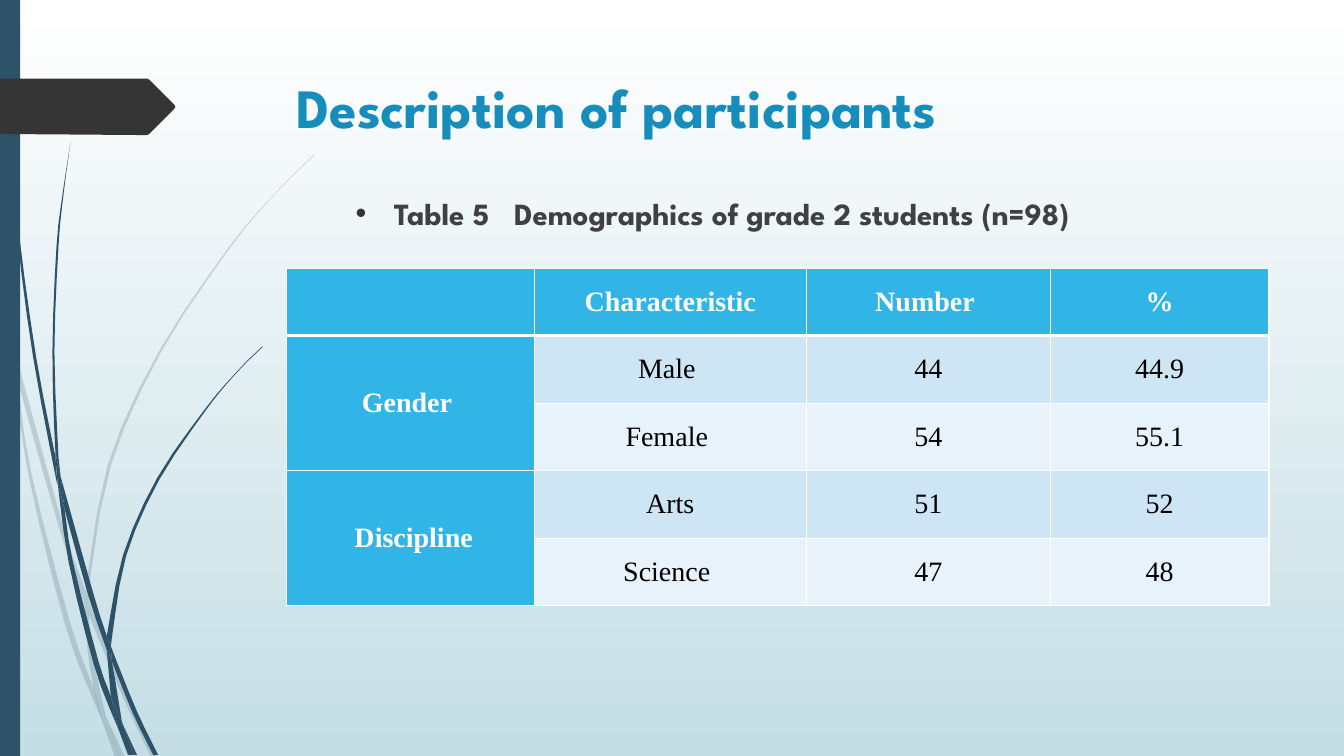
from math import dist

from pptx import Presentation
from pptx.dml.color import RGBColor
from pptx.enum.shapes import MSO_SHAPE
from pptx.enum.text import MSO_ANCHOR, PP_ALIGN
from pptx.oxml.ns import qn
from pptx.oxml.xmlchemy import OxmlElement
from pptx.util import Pt

RECT = MSO_SHAPE.RECTANGLE
MIDDLE = MSO_ANCHOR.MIDDLE
CENTER = PP_ALIGN.CENTER

PX = 9144
HIGH = 750
HEX = {
    "white": "FFFFFF", "mist": "C5DEE5", "stem": "2E5369", "tag": "353535",
    "title": "178DBB", "body": "404040", "head": "31B4E6",
    "odd": "CEE5F5", "even": "E8F2FA", "black": "000000",
}
SANS, SERIF = "League Spartan", "Times New Roman"

TITLE = "Description of participants"
CAPTION = ["Table 5", " ", "Demographics of grade 2 students (n=98)"]
ROWS = [
    ["", "Characteristic", "Number ", "%"],
    ["Gender ", "Male ", "44", "44.9"],
    ["", "Female ", "54", "55.1"],
    [" Discipline", "Arts", "51", "52"],
    ["", "Science ", "47", "48"],
]
GROUPS = [(1, 2), (3, 4)]
COLS = [246, 270, 242, 217]
ROW_H = 67

TAG = [(0, 78), (146, 78), (148, 79), (173, 104), (174, 106), (173, 108),
       (148, 133), (146, 134), (136, 134), (0, 133)]
PALE = [
    ([(0, 282), (9, 322), (11, 350)], [(10, 344), (0, 299)]),
    ([(14, 345), (62, 520), (85, 586)], [(84, 599), (58, 522), (17, 376)]),
    ([(88, 596), (92, 607), (127, 692), (155, 751)],
     [(150, 751), (123, 694), (88, 610)]),
    ([(105, 711), (124, 751)], [(119, 751)]),
    ([(11, 350), (17, 376), (31, 469), (70, 619), (93, 683), (101, 714)],
     [(92, 693), (65, 621), (28, 470), (11, 350)]),
    ([(84, 599), (88, 608), (91, 646), (105, 711)],
     [(96, 692), (93, 683), (87, 646), (84, 599)]),
    ([(312, 153), (289, 175), (268, 197), (228, 244), (158, 348),
      (107, 461), (85, 586)],
     [(88, 596), (88, 584), (110, 462), (160, 349), (229, 245),
      (268, 198), (290, 175), (312, 154)]),
    ([(101, 714), (114, 751)], [(119, 751)]),
    ([(85, 586), (88, 596), (88, 610)], [(88, 608), (84, 599)]),
    ([(93, 683), (96, 692), (105, 711), (119, 751)],
     [(101, 714), (99, 707)]),
]
DARK = [
    ([(3, 0), (4, 48), (7, 110), (17, 233), (33, 355), (56, 477), (57, 481)],
     [(55, 453), (36, 355), (19, 232), (8, 109), (5, 48), (4, 0)]),
    ([(60, 472), (93, 590), (106, 631)], [(106, 645), (88, 592), (64, 505)]),
    ([(110, 641), (113, 649), (136, 706), (157, 749)],
     [(152, 749), (132, 708), (111, 656)]),
    ([(57, 477), (64, 505), (72, 556), (98, 657), (110, 691), (117, 722)],
     [(111, 708), (93, 659), (68, 557), (57, 477)]),
    ([(70, 141), (62, 193), (56, 245), (52, 349), (55, 449), (60, 472)],
     [(58, 453), (54, 349), (58, 245), (63, 193), (70, 141)]),
    ([(122, 719), (136, 749)], [(133, 749)]),
    ([(55, 449), (60, 472), (64, 505)], [(57, 477), (55, 453)]),
    ([(260, 344), (245, 358), (231, 373), (204, 405), (156, 474),
      (122, 551), (106, 631)],
     [(110, 641), (111, 633), (125, 552), (158, 476), (205, 406),
      (231, 374), (245, 359), (261, 344)]),
    ([(117, 722), (131, 749)], [(127, 749)]),
    ([(106, 645), (111, 656), (121, 716), (122, 719)],
     [(116, 706), (110, 691)]),
    ([(106, 631), (110, 641), (111, 656)], [(109, 651), (106, 645)]),
    ([(110, 691), (116, 706), (122, 719), (133, 749)],
     [(130, 749), (117, 722), (116, 717)]),
]


def rgb(name):
    return RGBColor.from_string(HEX[name])


def emu(*vals):
    return [round(v * PX) for v in vals]


def paint(shape, color):
    shape.shadow.inherit = False
    shape.fill.solid()
    shape.fill.fore_color.rgb = rgb(color)
    shape.line.fill.background()


def style(run, font, size, color, bold):
    run.font.name, run.font.size, run.font.bold = font, Pt(size), bold
    run.font.color.rgb = rgb(color)


def smooth(knots):
    ends = [knots[0]] + knots + [knots[-1]]
    out = []
    for a, b, c, d in zip(ends, ends[1:], ends[2:], ends[3:]):
        steps = 3 if dist(b, c) > 30 else 1
        for t in [i / steps for i in range(steps)]:
            out.append([
                q + t * (r - p) / 2
                + t * t * (2 * p - 5 * q + 4 * r - s) / 2
                + t ** 3 * (3 * q - p - 3 * r + s) / 2
                for p, q, r, s in zip(a, b, c, d)])
    return out + [knots[-1]]


def shade(name, alpha=None):
    node = OxmlElement("a:srgbClr")
    node.set("val", HEX[name])
    return node


def outline(points, color, alpha=None):
    edge = [emu(*point) for point in points]
    pen = slide.shapes.build_freeform(*edge[0], scale=1.0)
    pen.add_line_segments(edge[1:], close=True)
    shape = pen.convert_to_shape()
    paint(shape, color)
    if alpha:
        node = OxmlElement("a:alpha")
        node.set("val", str(alpha * 1000))
        next(shape.element.spPr.iter(qn("a:srgbClr"))).append(node)


def text(*box):
    frame = slide.shapes.add_textbox(*emu(*box)).text_frame
    frame.word_wrap = True
    return frame.paragraphs[0]


def border(side, width):
    line = OxmlElement("a:" + side)
    line.set("w", str(Pt(width)))
    fill = OxmlElement("a:solidFill")
    fill.append(shade("white"))
    line.append(fill)
    return line


def dress(cell, row, col):
    head = row == 0 or col == 0
    cell.text = ROWS[row][col]
    cell.vertical_anchor = MIDDLE
    cell.margin_left = cell.margin_right = 7 * PX
    cell.margin_top = cell.margin_bottom = 0
    para = cell.text_frame.paragraphs[0]
    para.alignment = CENTER
    para.font.size = Pt(20)
    for run in para.runs:
        style(run, SERIF, 20, "white" if head else "black", head)
    cell.fill.solid()
    cell.fill.fore_color.rgb = rgb("head" if head else ("even", "odd")[row % 2])
    for i, side in enumerate(("lnL", "lnR", "lnT", "lnB")):
        thick = (row, side) in ((0, "lnB"), (1, "lnT"))
        cell._tc.get_or_add_tcPr().insert(i, border(side, 3 if thick else 1))


deck = Presentation()
deck.slide_width, deck.slide_height = emu(HIGH * 16 / 9, HIGH)
slide = deck.slides.add_slide(deck.slide_layouts[6])

back = slide.background.fill
back.gradient()
back.gradient_angle = 270
for stop, name, place in zip(back.gradient_stops, ("white", "mist"), (0, 1)):
    stop.color.rgb, stop.position = rgb(name), place

for blades, alpha in ((PALE, 20), (DARK, None)):
    for out, home in blades:
        outline(smooth(out) + smooth(home), "stem", alpha)
paint(slide.shapes.add_shape(RECT, *emu(0, 0, 20, HIGH)), "stem")
outline(TAG, "tag")

para = text(284, 68, 975, 140)
para.text = TITLE
style(para.runs[0], SANS, 39.6, "title", True)

para = text(343, 188, 987, 73)
para.space_before = Pt(10)
for part in CAPTION:
    run = para.add_run()
    run.text = part
    style(run, SANS, 22, "body", True)
para.runs[1].font._element.set("spc", "1200")
props = para._p.get_or_add_pPr()
props.set("marL", str(38 * PX))
props.set("indent", str(-38 * PX))
tint, face, dot = map(OxmlElement, ("a:buClr", "a:buFont", "a:buChar"))
tint.append(shade("tag"))
face.set("typeface", "Arial")
dot.set("char", "•")
props.extend([tint, face, dot])

grid = slide.shapes.add_table(
    len(ROWS), len(COLS),
    *emu(284, 266, sum(COLS), ROW_H * len(ROWS))).table
for col, width in zip(grid.columns, COLS):
    col.width = width * PX
for r, row in enumerate(grid.rows):
    row.height = ROW_H * PX
    for c in range(len(COLS)):
        dress(grid.cell(r, c), r, c)
for first, last in GROUPS:
    grid.cell(first, 0).merge(grid.cell(last, 0))

deck.save("out.pptx")
